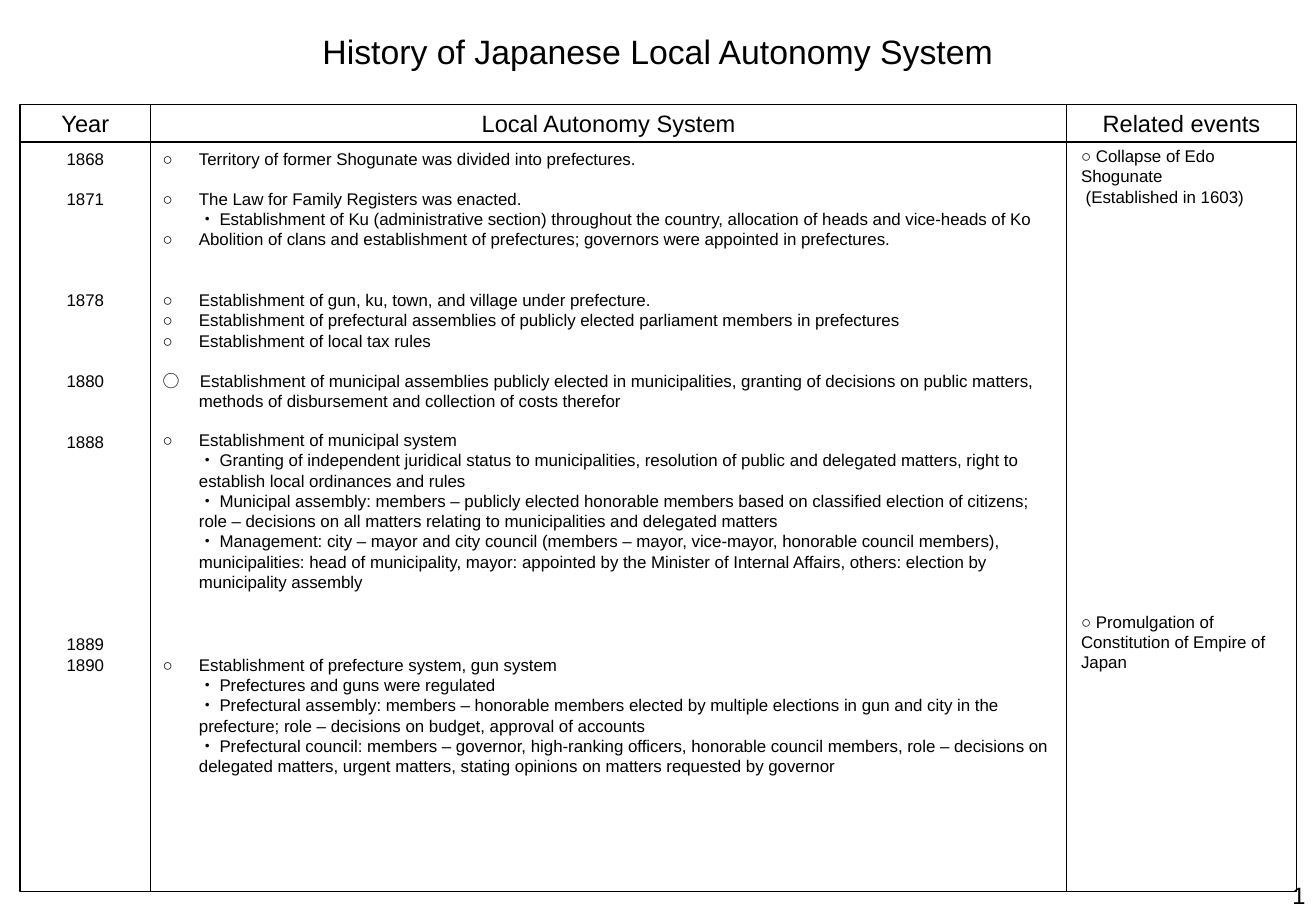
from pptx import Presentation
from pptx.dml.color import RGBColor
from pptx.enum.shapes import MSO_SHAPE
from pptx.enum.text import MSO_ANCHOR, MSO_AUTO_SIZE, PP_ALIGN
from pptx.util import Cm, Pt

RECT = MSO_SHAPE.RECTANGLE
TOP, MIDDLE = MSO_ANCHOR.TOP, MSO_ANCHOR.MIDDLE
LEFT, CENTER, RIGHT = PP_ALIGN.LEFT, PP_ALIGN.CENTER, PP_ALIGN.RIGHT
NO_FIT = MSO_AUTO_SIZE.NONE
COLORS = {"ink": "000000", "paper": "FFFFFF"}
LINE = 12

prs = Presentation()
prs.slide_width, prs.slide_height = Cm(27.51), Cm(19.05)
slide = prs.slides.add_slide(prs.slide_layouts[5])


def add_cell(left, top, width, height):
    sp = slide.shapes.add_shape(RECT, Cm(left), Cm(top), Cm(width), Cm(height))
    sp.shadow.inherit = False
    sp.fill.background()
    sp.line.color.rgb = RGBColor.from_string(COLORS["ink"])
    sp.line.width = Pt(0.75)
    return sp


def write(sp, lines, size=10, align=LEFT, anchor=TOP, hanging=0, exact=True):
    tf = sp.text_frame
    frame = {"word_wrap": True, "auto_size": NO_FIT, "vertical_anchor": anchor,
             "margin_left": Cm(0.25), "margin_right": Cm(0.25),
             "margin_top": Cm(0.13), "margin_bottom": Cm(0.13)}
    for name, value in frame.items():
        setattr(tf, name, value)
    for i, (gap, text) in enumerate(lines):
        p = tf.add_paragraph() if i else tf.paragraphs[0]
        p.text = text
        p.alignment = align
        p.space_before = Pt(gap * LINE)
        if exact:
            p.line_spacing = Pt(LINE)
        if hanging:
            pPr = p._p.get_or_add_pPr()
            pPr.set("marL", str(Cm(hanging)))
            pPr.set("indent", str(-Cm(hanging)))
        for r in p.runs:
            for name, value in {"name": "Arial", "size": Pt(size)}.items():
                setattr(r.font, name, value)
            r.font.color.rgb = RGBColor.from_string(COLORS["ink"])


title = slide.shapes.title
place = {"left": Cm(0), "top": Cm(0.51), "width": prs.slide_width, "height": Cm(1.12)}
for name, value in place.items():
    setattr(title, name, value)
write(title, [(0, "History of Japanese Local Autonomy System")],
      size=20, align=CENTER, anchor=MIDDLE, exact=False)

years = [(0, "1868"), (1, "1871"), (4, "1878"), (3, "1880"),
         (2, "1888"), (9, "1889"), (0, "1890")]
early_reforms = [
    (0, "○\tTerritory of former Shogunate was divided into prefectures."),
    (1, "○\tThe Law for Family Registers was enacted.\n"
        "・ Establishment of Ku (administrative section) throughout the country, "
        "allocation of heads and vice-heads of Ko"),
    (0, "○\tAbolition of clans and establishment of prefectures; "
        "governors were appointed in prefectures."),
    (2, "○\tEstablishment of gun, ku, town, and village under prefecture."),
    (0, "○\tEstablishment of prefectural assemblies of publicly elected "
        "parliament members in prefectures"),
    (0, "○\tEstablishment of local tax rules"),
    (1, "○　 Establishment of municipal assemblies publicly elected in municipalities, "
        "granting of decisions on public matters, methods of disbursement and "
        "collection of costs therefor"),
]
municipal_system = [
    (0, "○\tEstablishment of municipal system\n"
        "・ Granting of independent juridical status to municipalities, resolution of "
        "public and delegated matters, right to establish local ordinances and rules \n"
        "・ Municipal assembly: members – publicly elected honorable members based on "
        "classified election of citizens; role – decisions on all matters relating to "
        "municipalities and delegated matters \n"
        "・ Management: city – mayor and city council (members – mayor, vice-mayor, "
        "honorable council members), municipalities: head of municipality, mayor: "
        "appointed by the Minister of Internal Affairs, others: election by "
        "municipality assembly"),
]
prefecture_system = [
    (0, "○\tEstablishment of prefecture system, gun system\n"
        "・ Prefectures and guns were regulated \n"
        "・ Prefectural assembly: members – honorable members elected by multiple "
        "elections in gun and city in the prefecture; role – decisions on budget, "
        "approval of accounts \n"
        "・ Prefectural council: members – governor, high-ranking officers, honorable "
        "council members, role – decisions on delegated matters, urgent matters, "
        "stating opinions on matters requested by governor"),
]
related_events = [
    (0, "○ Collapse of Edo Shogunate"),
    (0, " (Established in 1603)"),
    (20, "○ Promulgation of Constitution of Empire of Japan"),
]

columns = [
    ("Year", 0.42, 2.73, years, {"align": CENTER}),
    ("Local Autonomy System", 3.15, 19.15, early_reforms, {"hanging": 0.76}),
    ("Related events", 22.3, 4.8, [], {}),
]
for heading, left, width, lines, style in columns:
    write(add_cell(left, 2.18, width, 0.79), [(0, heading)],
          size=14, align=CENTER, anchor=MIDDLE, exact=False)
    write(add_cell(left, 2.97, width, 15.67), lines, **style)

boxes = [
    (22.35, 2.92, 4.6, 12.47, related_events, {}),
    (3.15, 8.86, 19.2, 4.11, municipal_system, {"hanging": 0.76}),
    (3.15, 13.56, 19.2, 3.56, prefecture_system, {"hanging": 0.76}),
    (21.11, 18.39, 6.43, 0.66, [(0, "1")],
     {"size": 14, "align": RIGHT, "anchor": MIDDLE, "exact": False}),
]
for left, top, width, height, lines, style in boxes:
    sp = slide.shapes.add_textbox(Cm(left), Cm(top), Cm(width), Cm(height))
    write(sp, lines, **style)

slide.background.fill.solid()
slide.background.fill.fore_color.rgb = RGBColor.from_string(COLORS["paper"])
prs.save("out.pptx")
